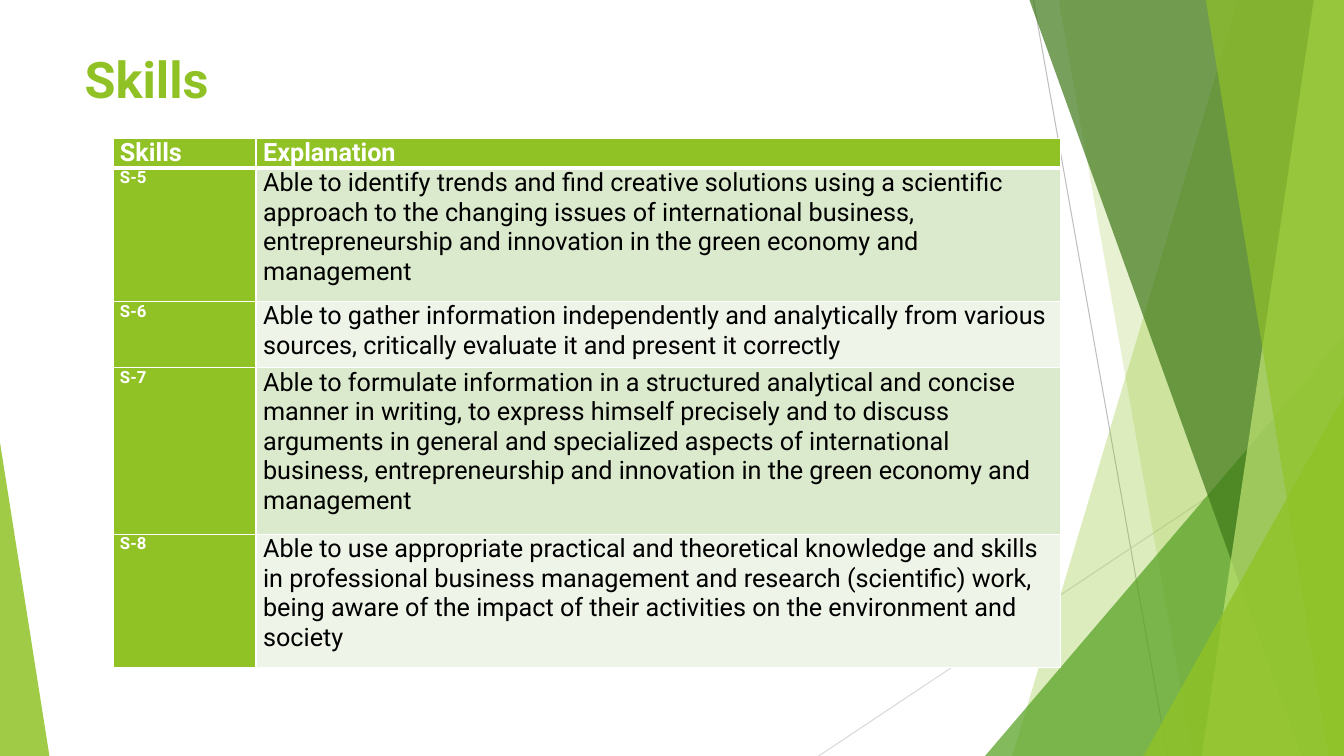
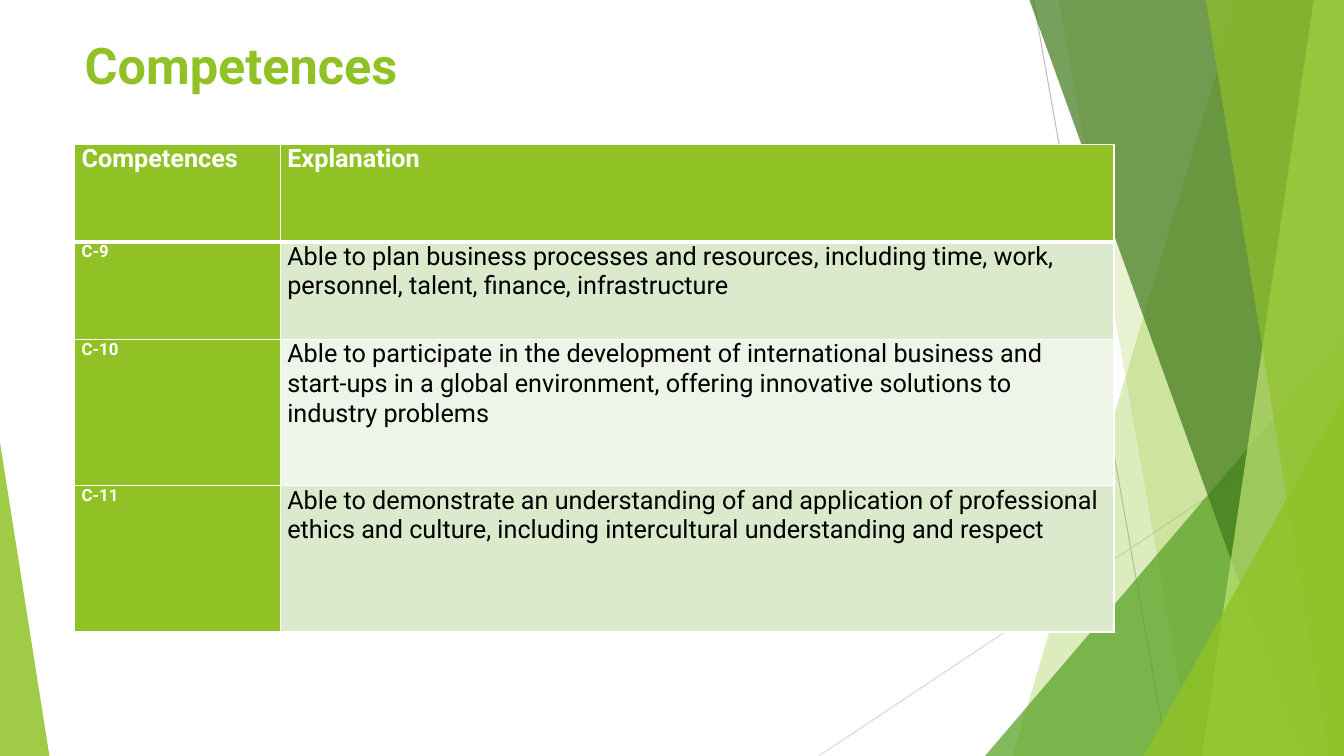
from dataclasses import dataclass

from lxml.etree import SubElement
from pptx import Presentation
from pptx.dml.color import RGBColor
from pptx.enum.shapes import MSO_CONNECTOR, MSO_SHAPE
from pptx.enum.text import MSO_ANCHOR, PP_ALIGN
from pptx.oxml.ns import qn
from pptx.util import Inches, Pt

COLORS = {
    "white": "FFFFFF",
    "black": "000000",
    "lime": "90C226",
    "green": "54A021",
    "forest": "3F7819",
    "pale_lime": "C0E474",
    "gray": "BFBFBF",
    "light_gray": "D9D9D9",
    "band_dark": "DBE9CD",
    "band_light": "EEF4E8",
}
FONT = "Roboto"
WIDTH, HEIGHT = 13.33, 7.5


@dataclass(frozen=True)
class Line:
    start: tuple[float, float]
    end: tuple[float, float]
    color: str


@dataclass(frozen=True)
class Blade:
    top_left: float
    bottom_left: float
    color: str
    opacity: int


@dataclass(frozen=True)
class Triangle:
    left: float
    top: float
    width: float
    apex: float
    color: str
    opacity: int


@dataclass(frozen=True)
class TablePage:
    title: str
    title_top: float
    left: float
    top: float
    column_widths: tuple[float, float]
    row_heights: tuple[float, ...]
    rows: tuple[tuple[str, str], ...]


LINES = (
    Line((10.25, 0), (11.58, HEIGHT), "gray"),
    Line((WIDTH, 4.03), (8.12, HEIGHT), "light_gray"),
)
FACETS = (
    Blade(12.28, 10.04, "lime", 30),
    Blade(10.5, 11.83, "lime", 20),
    Triangle(9.77, 3.33, 3.56, 1, "green", 72),
    Blade(10.21, 12.91, "forest", 70),
    Blade(13.03, 11.92, "pale_lime", 70),
    Blade(11.96, 13.18, "lime", 65),
    Triangle(11.34, 3.93, 1.99, 1, "lime", 80),
    Triangle(0, 4.39, 0.49, 0, "lime", 85),
)
PAGES = (
    TablePage(
        "Skills", 0.43, 1.12, 1.37, (1.42, 7.98), (0.3, 1.32, 0.66, 1.65, 1.32),
        (
            ("Skills", "Explanation"),
            ("S-5", "Able to identify trends and find creative solutions using a scientific "
             "approach to the changing issues of international business, entrepreneurship "
             "and innovation in the green economy and management"),
            ("S-6", "Able to gather information independently and analytically from various "
             "sources, critically evaluate it and present it correctly"),
            ("S-7", "Able to formulate information in a structured analytical and concise "
             "manner in writing, to express himself precisely and to discuss arguments in "
             "general and specialized aspects of international business, entrepreneurship "
             "and innovation in the green economy and management"),
            ("S-8", "Able to use appropriate practical and theoretical knowledge and skills "
             "in professional business management and research (scientific) work, being "
             "aware of the impact of their activities on the environment and society"),
        ),
    ),
    TablePage(
        "Competences", 0.29, 0.74, 1.43, (2.04, 8.27), (0.97, 0.97, 1.45, 1.45),
        (
            ("Competences", "Explanation"),
            ("C-9", "Able to plan business processes and resources, including time, work, "
             "personnel, talent, finance, infrastructure"),
            ("C-10", "Able to participate in the development of international business and "
             "start-ups in a global environment, offering innovative solutions to industry "
             "problems"),
            ("C-11", "Able to demonstrate an understanding of and application of "
             "professional ethics and culture, including intercultural understanding and "
             "respect"),
        ),
    ),
)


def rgb(name: str) -> RGBColor:
    return RGBColor.from_string(COLORS[name])


def format_text(text_frame, size: float, color: str, bold: bool) -> None:
    for para in text_frame.paragraphs:
        para.alignment = PP_ALIGN.LEFT
        for span in para.runs:
            span.font.name = FONT
            span.font.size = Pt(size)
            span.font.bold = bold
            span.font.color.rgb = rgb(color)


def add_line(page, line: Line):
    connector = page.shapes.add_connector(
        MSO_CONNECTOR.STRAIGHT, *(Inches(value) for value in line.start + line.end)
    )
    connector.line.color.rgb = rgb(line.color)
    connector.line.width = Pt(0.75)
    SubElement(connector.element.spPr, qn("a:effectLst"))
    return connector


def add_facet(page, facet: Blade | Triangle):
    if isinstance(facet, Blade):
        builder = page.shapes.build_freeform(Inches(facet.top_left), 0)
        corners = ((WIDTH, 0), (WIDTH, HEIGHT), (facet.bottom_left, HEIGHT))
        builder.add_line_segments([(Inches(x), Inches(y)) for x, y in corners])
        shape = builder.convert_to_shape()
    else:
        shape = page.shapes.add_shape(
            MSO_SHAPE.ISOSCELES_TRIANGLE, Inches(facet.left), Inches(facet.top),
            Inches(facet.width), Inches(HEIGHT - facet.top),
        )
        shape.adjustments[0] = facet.apex
    shape.shadow.inherit = False
    shape.line.fill.background()
    shape.fill.solid()
    shape.fill.fore_color.rgb = rgb(facet.color)
    color = shape.element.spPr.find(qn("a:solidFill"))[0]
    SubElement(color, qn("a:alpha"), val=str(facet.opacity * 1000))
    return shape


def decorate_layout(layout, page) -> None:
    shapes = [add_line(page, line) for line in LINES]
    shapes += [add_facet(page, facet) for facet in FACETS]
    for shape in shapes:
        layout.shapes.element.append(shape.element)


def set_borders(cell, top_width: float, bottom_width: float) -> None:
    properties = cell._tc.get_or_add_tcPr()
    widths = {"L": 1, "R": 1, "T": top_width, "B": bottom_width}
    for side, width in widths.items():
        border = SubElement(properties, qn(f"a:ln{side}"), w=str(Pt(width)))
        fill = SubElement(border, qn("a:solidFill"))
        SubElement(fill, qn("a:srgbClr"), val=COLORS["white"])


def format_cell(cell, row: int, column: int) -> None:
    is_header, is_label = row == 0, column == 0
    is_accent = is_header or is_label
    set_borders(cell, 3 if row == 1 else 1, 3 if is_header else 1)
    cell.margin_left = cell.margin_right = Inches(0.07)
    cell.margin_top = cell.margin_bottom = 0
    cell.vertical_anchor = MSO_ANCHOR.TOP
    band = "band_dark" if row % 2 else "band_light"
    cell.fill.solid()
    cell.fill.fore_color.rgb = rgb("lime" if is_accent else band)
    size = 12 if is_label and not is_header else 18
    format_text(cell.text_frame, size, "white" if is_accent else "black", is_accent)


def add_title(page, content: TablePage) -> None:
    title = page.shapes.title
    title.left, title.top = Inches(0.74), Inches(content.title_top)
    title.width, title.height = Inches(9.4), Inches(0.94)
    title.text_frame.text = content.title
    title.text_frame.vertical_anchor = MSO_ANCHOR.TOP
    format_text(title.text_frame, 36, "lime", True)


def add_content_table(page, content: TablePage) -> None:
    table = page.shapes.add_table(
        len(content.rows), len(content.column_widths),
        Inches(content.left), Inches(content.top),
        Inches(sum(content.column_widths)), Inches(sum(content.row_heights)),
    ).table
    for column, width in zip(table.columns, content.column_widths):
        column.width = Inches(width)
    for row, height in zip(table.rows, content.row_heights):
        row.height = Inches(height)
    for row_index, texts in enumerate(content.rows):
        for column_index, text in enumerate(texts):
            cell = table.cell(row_index, column_index)
            cell.text_frame.text = text
            format_cell(cell, row_index, column_index)


def main() -> None:
    deck = Presentation()
    deck.slide_width, deck.slide_height = Inches(WIDTH), Inches(HEIGHT)
    layout = deck.slide_layouts[5]
    pages = [deck.slides.add_slide(layout) for _ in PAGES]
    decorate_layout(layout, pages[0])
    for page, content in zip(pages, PAGES):
        add_title(page, content)
        add_content_table(page, content)
    deck.save("out.pptx")


if __name__ == "__main__":
    main()
